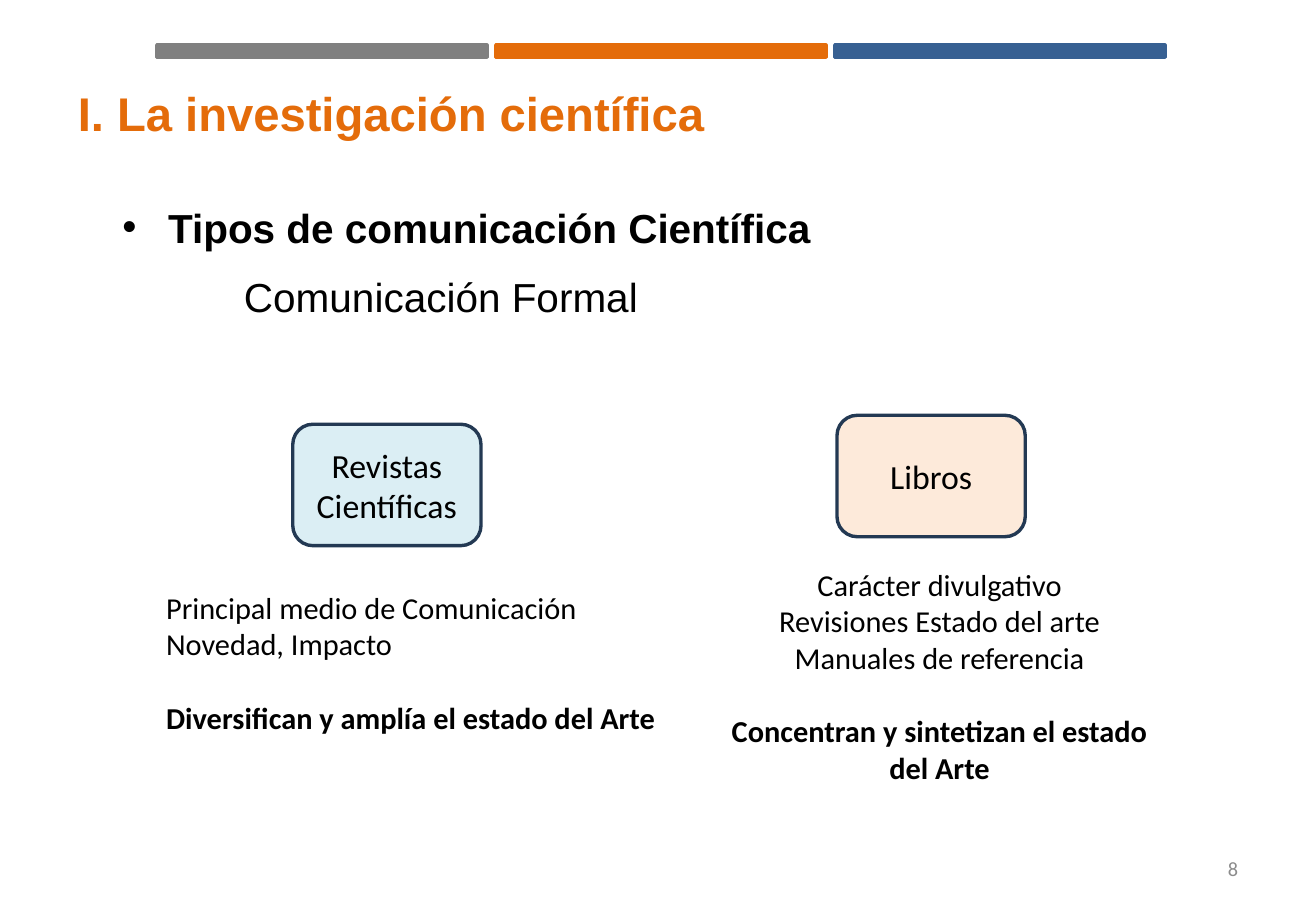
import pptx
import pptx.util
import pptx.dml.color
import pptx.enum.shapes
import pptx.enum.text
import lxml.etree

Pt = pptx.util.Pt
RGB = pptx.dml.color.RGBColor
Kind = pptx.enum.shapes.MSO_SHAPE
Align = pptx.enum.text.PP_ALIGN
Anchor = pptx.enum.text.MSO_ANCHOR

GRAY = RGB(0x80, 0x80, 0x80)
ORANGE = RGB(0xE4, 0x6C, 0x0A)
BLUE = RGB(0x37, 0x60, 0x92)
NAVY = RGB(0x23, 0x39, 0x53)
AQUA = RGB(0xDB, 0xEE, 0xF4)
PEACH = RGB(0xFD, 0xEA, 0xDA)
PALE = RGB(0x8C, 0x8C, 0x8C)
BLACK = RGB(0, 0, 0)


def add_form(kind, box, fill, edge):
    form = slide.shapes.add_shape(kind, *map(Pt, box))
    form.shadow.inherit = False
    form.fill.solid()
    form.fill.fore_color.rgb = fill
    form.line.color.rgb = edge
    form.line.width = Pt(2)
    return form


def add_text(frame, lines, size, font="Calibri", color=BLACK, align=Align.LEFT):
    for i, (text, bold) in enumerate(lines):
        para = frame.paragraphs[0] if i == 0 else frame.add_paragraph()
        para.alignment = align
        run = para.add_run()
        run.text = text
        run.font.size = Pt(size)
        run.font.name = font
        run.font.bold = bold
        run.font.color.rgb = color


deck = pptx.Presentation()
deck.slide_width = Pt(780)
deck.slide_height = Pt(540)
slide = deck.slides.add_slide(deck.slide_layouts[6])

for i, color in enumerate((GRAY, ORANGE, BLUE)):
    add_form(Kind.RECTANGLE, (92.9 + i * 200.9, 26.8, 195.8, 7.2), color, color)

title = slide.shapes.add_textbox(Pt(39), Pt(21.6), Pt(702), Pt(90)).text_frame
title.word_wrap = True
title.vertical_anchor = Anchor.MIDDLE
add_text(title, [("I. La investigación científica", True)], 28, "Arial", ORANGE)

number = slide.shapes.add_textbox(Pt(558.7), Pt(500.4), Pt(182.2), Pt(28.8)).text_frame
number.word_wrap = True
number.vertical_anchor = Anchor.MIDDLE
add_text(number, [("8", False)], 12, color=PALE, align=Align.RIGHT)

topic = slide.shapes.add_textbox(Pt(65.5), Pt(116.6), Pt(625), Pt(77.8)).text_frame
topic.word_wrap = True
add_text(topic, [("Tipos de comunicación Científica", True), ("Comunicación Formal", False)],
         24, "Arial", align=Align.JUSTIFY)
for para, left, hang in zip(topic.paragraphs, (27, 72), (-27, 0)):
    para.space_before = para.space_after = Pt(6)
    props = para._p.get_or_add_pPr()
    props.set("marL", str(Pt(left)))
    props.set("indent", str(Pt(hang)))
props = topic.paragraphs[0]._p.get_or_add_pPr()
space = "{http://schemas.openxmlformats.org/drawingml/2006/main}"
lxml.etree.SubElement(props, space + "buFont", typeface="Arial")
lxml.etree.SubElement(props, space + "buChar", char="•")

cards = [("Revistas Científicas", 173.5, 251.5, AQUA), ("Libros", 496.1, 246.2, PEACH)]
for label, left, top, fill in cards:
    card = add_form(Kind.ROUNDED_RECTANGLE, (left, top, 111.6, 72), fill, NAVY).text_frame
    card.word_wrap = True
    card.vertical_anchor = Anchor.MIDDLE
    add_text(card, [(label, False)], 20, align=Align.CENTER)

notes = [
    ((91.4, 345.6, 306.7, 94.3), Align.LEFT, 2,
     ["Principal medio de Comunicación", "Novedad, Impacto",
      "Diversifican y amplía el estado del Arte"]),
    ((425.5, 331.9, 262.8, 138.2), Align.CENTER, 3,
     ["Carácter divulgativo", "Revisiones Estado del arte", "Manuales de referencia",
      "Concentran y sintetizan el estado", "del Arte"]),
]
for box, align, count, lines in notes:
    note = slide.shapes.add_textbox(*map(Pt, box)).text_frame
    note.word_wrap = False
    add_text(note, [(text, i >= count) for i, text in enumerate(lines)], 18, align=align)
    note.paragraphs[count].space_before = Pt(22)

deck.save("out.pptx")
